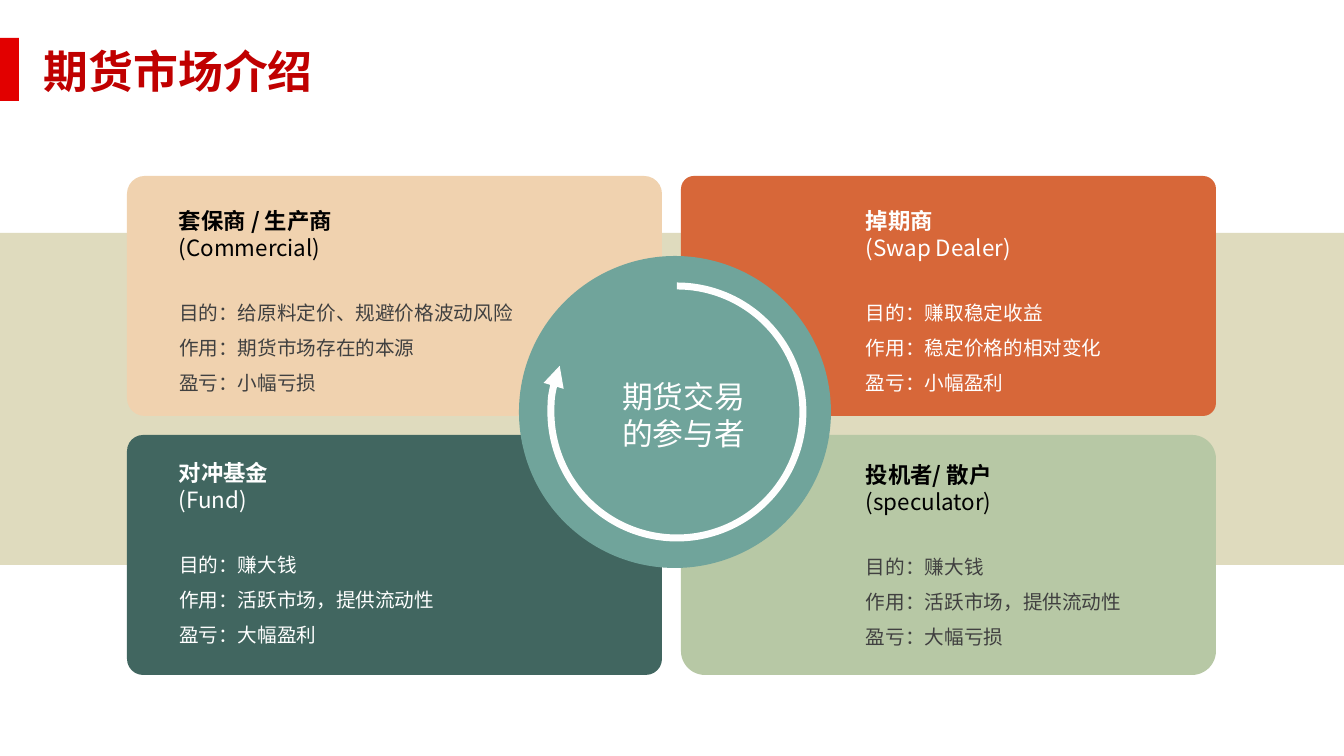
from lxml.etree import SubElement
from pptx import Presentation
from pptx.dml.color import RGBColor
from pptx.enum.shapes import MSO_SHAPE
from pptx.enum.text import PP_ALIGN
from pptx.oxml.ns import qn
from pptx.util import Emu, Pt

TITLE = "期货市场介绍"
CENTER = ["期货交易", "的参与者"]
# Cards in reading order; "rise" is the heading's distance from the card top
CARDS = [
    dict(name="套保商 / 生产商", english="(Commercial)", fill="sand", ink="black", body="grey",
         radius=0.074, rise=31, facts=["给原料定价、规避价格波动风险", "期货市场存在的本源", "小幅亏损"]),
    dict(name="掉期商", english="(Swap Dealer)", fill="orange", ink="white", body="white",
         radius=0.054, rise=31, facts=["赚取稳定收益", "稳定价格的相对变化", "小幅盈利"]),
    dict(name="对冲基金", english="(Fund)", fill="pine", ink="white", body="white",
         radius=0.067, rise=24, facts=["赚大钱", "活跃市场，提供流动性", "大幅盈利"]),
    dict(name="投机者/ 散户", english="(speculator)", fill="sage", ink="black", body="grey",
         radius=0.1, rise=26, facts=["赚大钱", "活跃市场，提供流动性", "大幅亏损"]),
]
FACT_LABELS = ["目的", "作用", "盈亏"]

THEME = dict(
    font="Noto Sans CJK SC",
    colors=dict(band="DFDBBE", tag="E20000", title="C00000", sand="F0D2AF", orange="D76739",
                pine="416660", sage="B7C8A5", teal="70A49B", arc="FEFEFE",
                black="000000", white="FFFFFF", grey="404040"),
    sizes=dict(title=32, center=22, heading=16, body=14),
)

WIDTH, HEIGHT = 1344, 756
PX_PER_INCH = 100.8
CARD_X, CARD_Y, CARD_W, CARD_H, GAP = 127, 176, 535, 240, 19
TEXT_INSETS = (52, 185)   # left column, right column
TEXT_W = (441, 288)
BODY_DROP = 82            # heading top to body top
HUB = (519, 256, 312, 312)
ARC = (551, 286, 252, 252)
ARC_START, ARC_END = 270, 201.5   # degrees clockwise from three o'clock


def px(n):
    return Emu(round(n * 914400 / PX_PER_INCH))


def color(name):
    return RGBColor.from_string(THEME["colors"][name])


def add_block(s, kind, box, fill=None):
    shape = s.shapes.add_shape(kind, *map(px, box))
    shape.shadow.inherit = False
    shape.line.fill.background()
    if fill:
        shape.fill.solid()
        shape.fill.fore_color.rgb = color(fill)
    else:
        shape.fill.background()
    return shape


def add_text(s, lines, box, *, size, ink, bold_lines=(), align=PP_ALIGN.LEFT,
             spacing=None, inset=True):
    tf = s.shapes.add_textbox(*map(px, box)).text_frame
    tf.word_wrap = True
    if not inset:
        tf.margin_left = tf.margin_top = tf.margin_right = tf.margin_bottom = 0
    for i, line in enumerate(lines):
        p = tf.paragraphs[0] if i == 0 else tf.add_paragraph()
        p.alignment = align
        p.line_spacing = spacing
        r = p.add_run()
        r.text = line
        r.font.size = Pt(THEME["sizes"][size])
        r.font.bold = i in bold_lines
        r.font.color.rgb = color(ink)
        r.font.name = THEME["font"]
        SubElement(r.font._element, qn("a:ea"), typeface=THEME["font"])


def add_cycle_arrow(s):
    arc = add_block(s, MSO_SHAPE.ARC, ARC)
    for i, angle in enumerate((ARC_START, ARC_END)):
        arc.adjustments[i] = angle * 60000 / 100000
    arc.line.color.rgb = color("arc")
    arc.line.width = Pt(5)
    SubElement(arc.line._get_or_add_ln(), qn("a:tailEnd"), type="triangle")


def main():
    prs = Presentation()
    prs.slide_width, prs.slide_height = px(WIDTH), px(HEIGHT)
    s = prs.slides.add_slide(prs.slide_layouts[6])

    add_block(s, MSO_SHAPE.RECTANGLE, (0, 233, WIDTH, 332), "band")
    add_block(s, MSO_SHAPE.RECTANGLE, (0, 38, 19, 63), "tag")
    add_text(s, [TITLE], (34, 39, 309, 65), size="title", ink="title", bold_lines=(0,))

    origins = [(CARD_X + i % 2 * (CARD_W + GAP), CARD_Y + i // 2 * (CARD_H + GAP))
               for i in range(len(CARDS))]
    for card, (x, y) in zip(CARDS, origins):
        block = add_block(s, MSO_SHAPE.ROUNDED_RECTANGLE, (x, y, CARD_W, CARD_H), card["fill"])
        block.adjustments[0] = card["radius"]

    add_block(s, MSO_SHAPE.OVAL, HUB, "teal")
    add_cycle_arrow(s)

    for i, (card, (x, y)) in enumerate(zip(CARDS, origins)):
        left, top = x + TEXT_INSETS[i % 2], y + card["rise"]
        add_text(s, [card["name"], card["english"]], (left, top, 272, 54),
                 size="heading", ink=card["ink"], bold_lines=(0,), inset=False)
        facts = [f"{label}：{fact}" for label, fact in zip(FACT_LABELS, card["facts"])]
        add_text(s, facts, (left, top + BODY_DROP, TEXT_W[i % 2], 107),
                 size="body", ink=card["body"], spacing=1.5, inset=False)

    add_text(s, CENTER, (573, 373, 221, 85), size="center", ink="white", align=PP_ALIGN.CENTER)
    prs.save("out.pptx")


if __name__ == "__main__":
    main()
